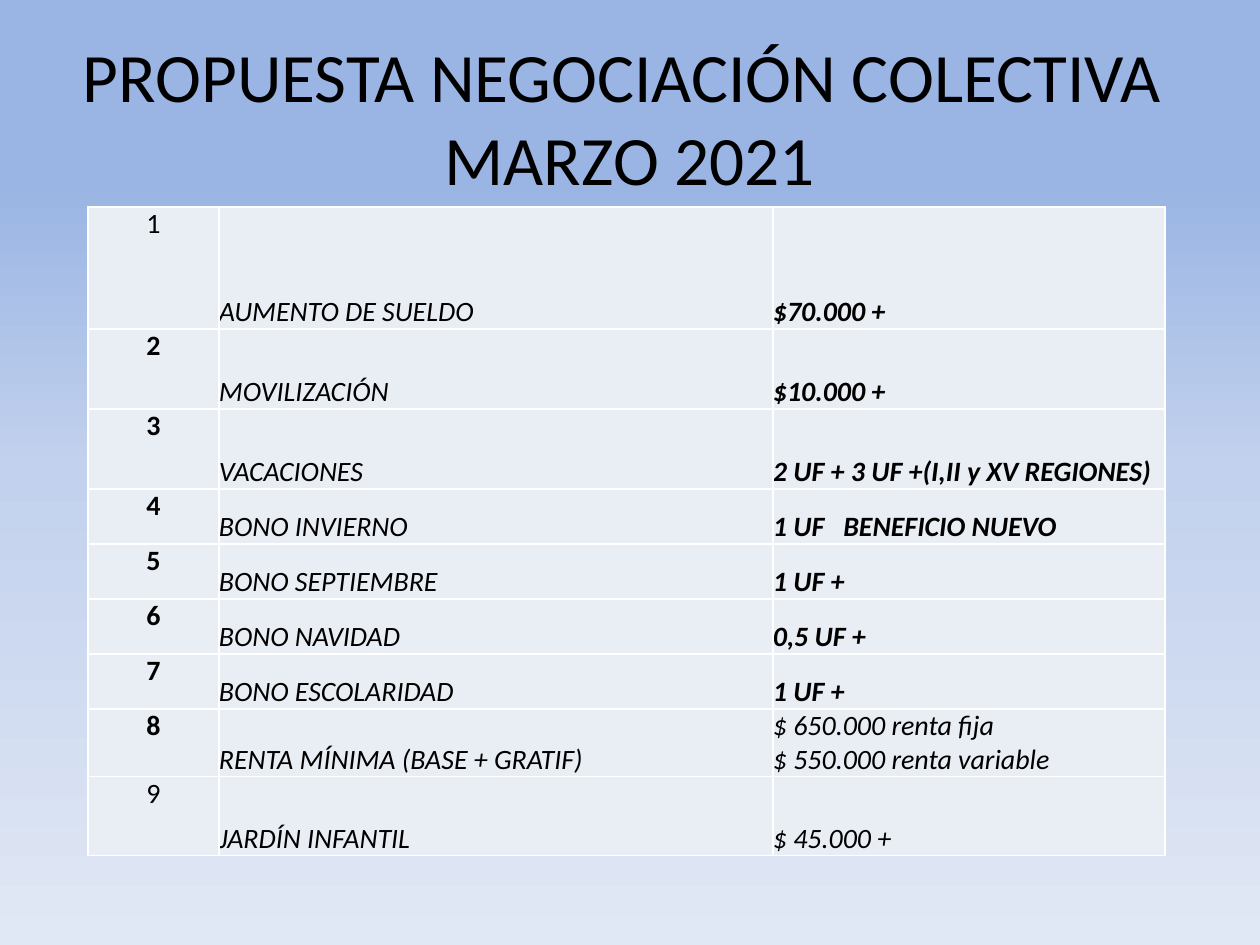
from lxml.etree import SubElement
from pptx import Presentation
from pptx.dml.color import RGBColor
from pptx.enum.text import MSO_ANCHOR, PP_ALIGN
from pptx.oxml.ns import qn
from pptx.util import Pt

EMU_PER_PX = 914400 / 126
FONT = "Calibri"
COLORS = {
    "text": "000000",
    "cell": "E9EDF4",
    "border": "FFFFFF",
    "sky": "9AB5E4",
    "haze": "C2D1ED",
    "mist": "E1E8F5",
}
BACKGROUND_STOPS = [(12, "sky"), (19, "sky"), (50, "haze"), (100, "mist")]
COLUMN_WIDTHS = [131, 554, 392]
BENEFITS = [
    (122, "AUMENTO DE SUELDO ", ["$70.000 +"]),
    (80, "MOVILIZACIÓN", ["$10.000 +"]),
    (80, "VACACIONES", ["2 UF + 3 UF +(I,II y XV REGIONES)"]),
    (55, "BONO INVIERNO", ["1 UF   BENEFICIO NUEVO"]),
    (55, "BONO SEPTIEMBRE", ["1 UF +"]),
    (55, "BONO NAVIDAD", ["0,5 UF +"]),
    (55, "BONO ESCOLARIDAD", ["1 UF +"]),
    (68, "RENTA MÍNIMA (BASE + GRATIF)", ["$ 650.000 renta fija", "$ 550.000 renta variable"]),
    (79, "JARDÍN INFANTIL ", ["$ 45.000 +"]),
]
BOLD_NUMBERS = range(2, 9)
BOLD_AMOUNTS = range(1, 8)


def px(length):
    return round(length * EMU_PER_PX)


def color(name):
    return RGBColor.from_string(COLORS[name])


def paint_background(page):
    fill = page.background.fill
    fill.gradient()
    fill.gradient_angle = 270
    stops = page.background._cSld.find(".//" + qn("a:gsLst"))
    for stop in list(stops):
        stops.remove(stop)
    for percent, name in BACKGROUND_STOPS:
        stop = SubElement(stops, qn("a:gs"), pos=str(percent * 1000))
        SubElement(stop, qn("a:srgbClr"), val=COLORS[name])


def write_lines(frame, lines, size, align, bold=False, italic=False):
    for index, line in enumerate(lines):
        para = frame.add_paragraph() if index else frame.paragraphs[0]
        para.alignment = align
        span = para.add_run()
        span.text = line
        span.font.name = FONT
        span.font.size = Pt(size)
        span.font.bold = bold
        span.font.italic = italic
        span.font.color.rgb = color("text")


def add_title(page, text):
    box = page.shapes.add_textbox(px(63), px(38), px(1134), px(157))
    frame = box.text_frame
    frame.word_wrap = True
    frame.vertical_anchor = MSO_ANCHOR.MIDDLE
    write_lines(frame, [text], 39.6, PP_ALIGN.CENTER)


def style_cell(cell, anchor):
    cell.margin_left = cell.margin_right = cell.margin_top = cell.margin_bottom = 0
    cell.vertical_anchor = anchor
    properties = cell._tc.get_or_add_tcPr()
    for side in ("lnL", "lnR", "lnT", "lnB"):
        line = SubElement(properties, qn(f"a:{side}"), w=str(Pt(1)))
        solid = SubElement(line, qn("a:solidFill"))
        SubElement(solid, qn("a:srgbClr"), val=COLORS["border"])
    cell.fill.solid()
    cell.fill.fore_color.rgb = color("cell")


def add_benefits_table(page):
    heights = [height for height, _, _ in BENEFITS]
    table = page.shapes.add_table(
        len(BENEFITS), len(COLUMN_WIDTHS),
        px(88), px(207), px(sum(COLUMN_WIDTHS)), px(sum(heights)),
    ).table
    table.first_row = False
    table.horz_banding = False
    for column, width in zip(table.columns, COLUMN_WIDTHS):
        column.width = px(width)
    for number, (height, benefit, amounts) in enumerate(BENEFITS, 1):
        row = table.rows[number - 1]
        row.height = px(height)
        contents = [
            ([str(number)], PP_ALIGN.CENTER, MSO_ANCHOR.TOP, number in BOLD_NUMBERS, False),
            ([benefit], PP_ALIGN.JUSTIFY, MSO_ANCHOR.BOTTOM, False, True),
            (amounts, PP_ALIGN.JUSTIFY, MSO_ANCHOR.BOTTOM, number in BOLD_AMOUNTS, True),
        ]
        for cell, (lines, align, anchor, bold, italic) in zip(row.cells, contents):
            style_cell(cell, anchor)
            write_lines(cell.text_frame, lines, 16, align, bold, italic)


def main():
    deck = Presentation()
    deck.slide_width = px(1260)
    deck.slide_height = px(945)
    page = deck.slides.add_slide(deck.slide_layouts[6])
    paint_background(page)
    add_title(page, "PROPUESTA NEGOCIACIÓN COLECTIVA  MARZO 2021")
    add_benefits_table(page)
    deck.save("out.pptx")


if __name__ == "__main__":
    main()
